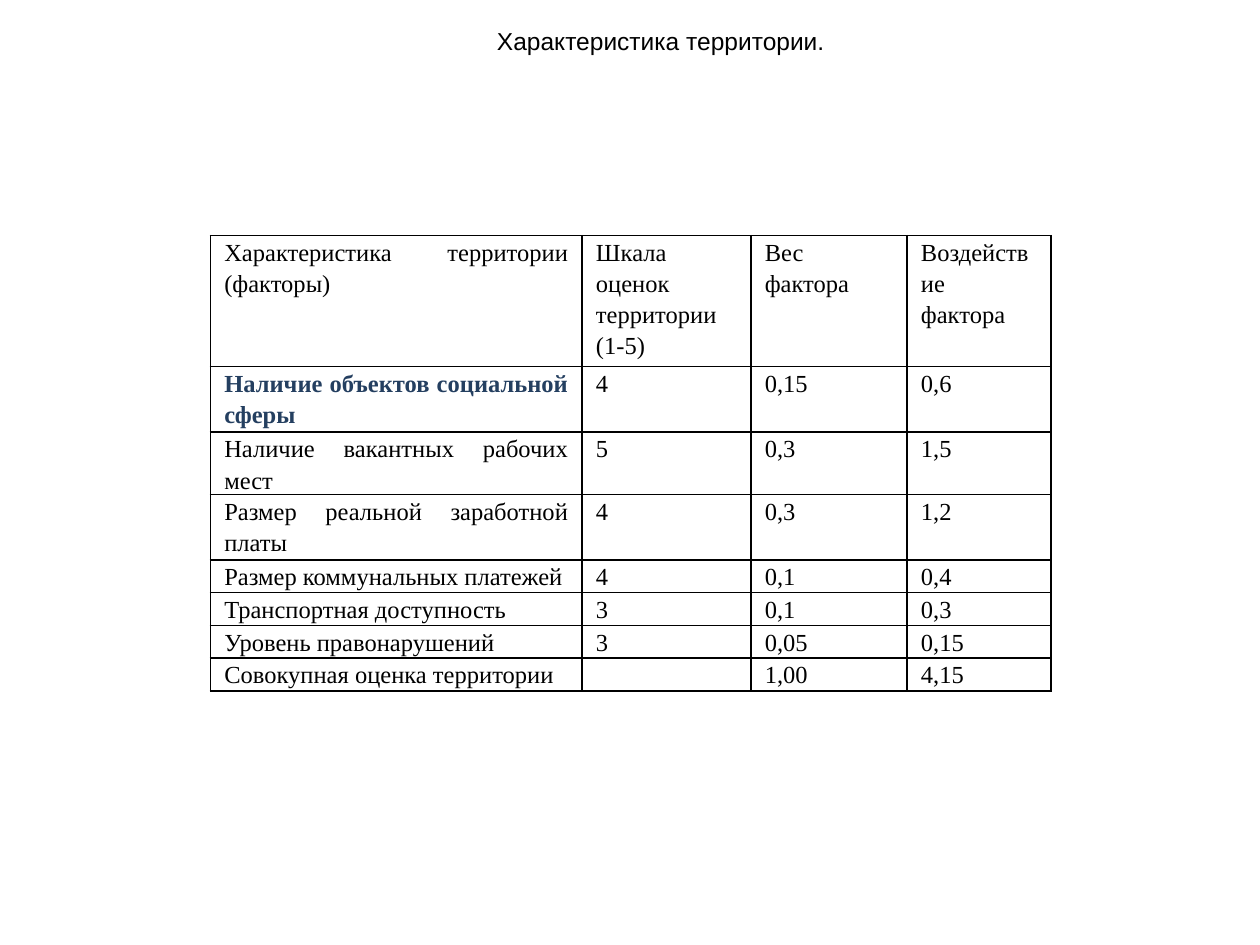
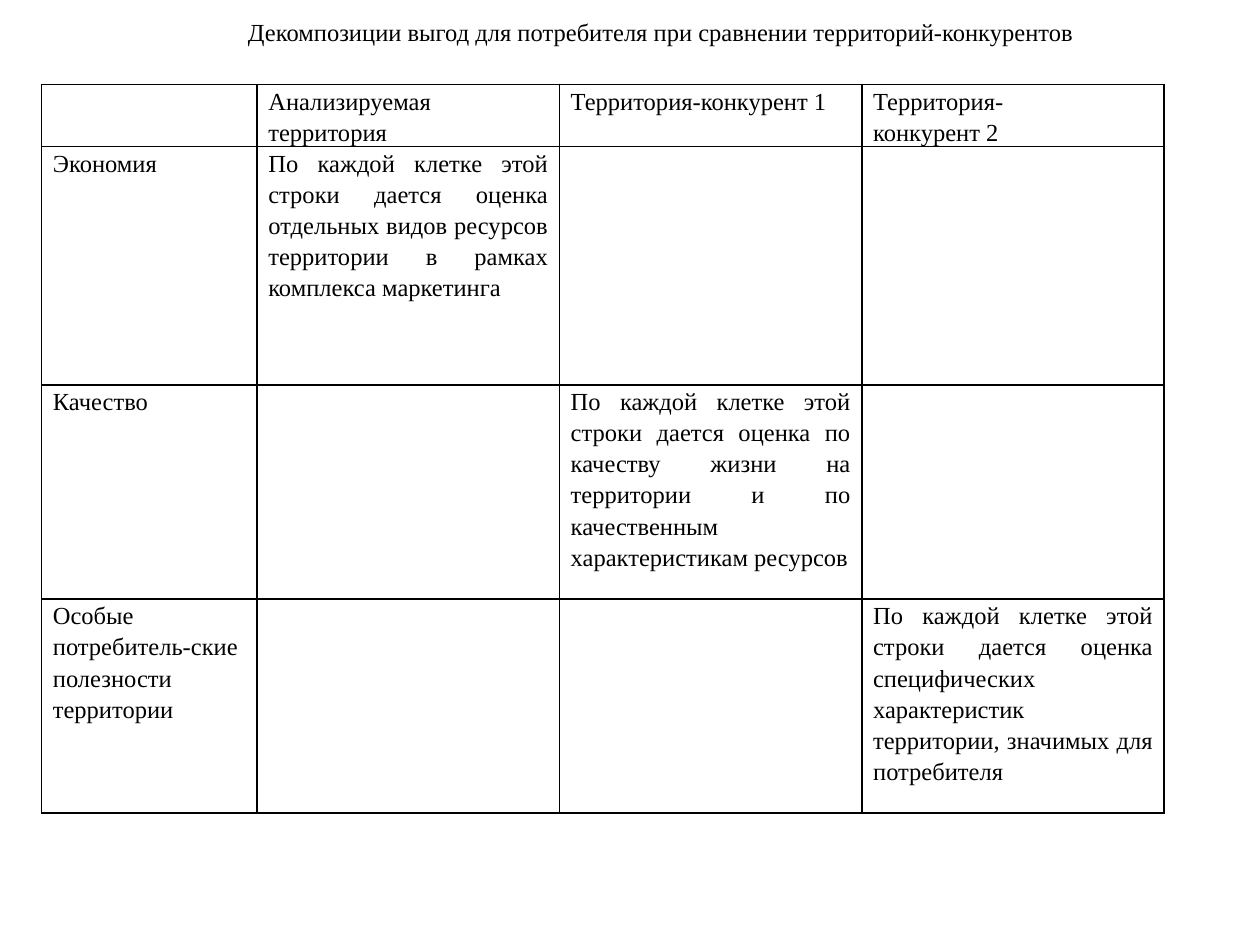
from dataclasses import dataclass

import pptx
import pptx.dml.color
import pptx.enum.text
import pptx.oxml.ns
import pptx.presentation
import pptx.slide
import pptx.table
import pptx.text.text
import pptx.util
from lxml import etree
from pptx.util import Inches

COLORS = {"text": "000000", "border": "000000", "emphasis": "243F60"}
BODY_FONT = "Times New Roman"
TEXT_SIZE = pptx.util.Pt(14)
BORDER_WIDTH = pptx.util.Pt(1)
TITLE_ONLY_LAYOUT = 5


@dataclass
class TitleSpec:
    text: str
    font: str
    top_inset: float = 0


@dataclass
class GridSpec:
    left: float
    top: float
    side_inset: float
    widths: list[float]
    heights: list[float]
    rows: list[list[str]]
    emphasized: str = ""


# Slide content
TERRITORY_TITLE = TitleSpec("Характеристика территории.", "Arial", 0.14)
TERRITORY_GRID = GridSpec(
    left=1.67, top=1.87, side_inset=0.11,
    widths=[2.95, 1.34, 1.24, 1.14],
    heights=[1.04, 0.52, 0.49, 0.52] + [0.26] * 4,
    rows=[
        ["Характеристика территории (факторы)", "Шкала оценок территории (1-5)",
         "Вес фактора", "Воздействие\nфактора"],
        ["Наличие объектов социальной сферы", "4", "0,15", "0,6"],
        ["Наличие вакантных рабочих мест", "5", "0,3", "1,5"],
        ["Размер реальной заработной платы", "4", "0,3", "1,2"],
        ["Размер коммунальных платежей", "4", "0,1", "0,4"],
        ["Транспортная доступность", "3", "0,1", "0,3"],
        ["Уровень правонарушений", "3", "0,05", "0,15"],
        ["Совокупная оценка территории", "", "1,00", "4,15"],
    ],
    emphasized="Наличие объектов социальной сферы",
)

BENEFITS_TITLE = TitleSpec(
    "Декомпозиции выгод для потребителя при сравнении территорий-конкурентов", BODY_FONT)
EACH_CELL = "По каждой клетке этой строки дается оценка"
BENEFITS_GRID = GridSpec(
    left=0.33, top=0.67, side_inset=0.09,
    widths=[1.71] + [2.4] * 3,
    heights=[0.49, 1.89, 1.7, 1.7],
    rows=[
        ["", "Анализируемая территория", "Территория-конкурент 1", "Территория-\nконкурент 2"],
        ["Экономия",
         f"{EACH_CELL} отдельных видов ресурсов территории в рамках комплекса маркетинга", "", ""],
        ["Качество", "",
         f"{EACH_CELL} по качеству жизни на территории и по качественным "
         "характеристикам ресурсов", ""],
        ["Особые потребитель-ские полезности территории", "", "",
         f"{EACH_CELL} специфических характеристик территории, значимых для потребителя"],
    ],
)


def format_para(para: pptx.text.text._Paragraph, font: str, color: str, bold: bool = False) -> None:
    para.font.name = font
    para.font.size = TEXT_SIZE
    para.font.bold = bold
    para.font.color.rgb = pptx.dml.color.RGBColor.from_string(COLORS[color])


def add_title(page: pptx.slide.Slide, spec: TitleSpec) -> None:
    title = page.shapes.title
    title.left, title.top = Inches(0), Inches(0)
    title.width, title.height = Inches(10), Inches(0.5)
    frame = title.text_frame
    frame.text = spec.text
    frame.word_wrap = True
    frame.auto_size = pptx.enum.text.MSO_AUTO_SIZE.NONE
    frame.vertical_anchor = pptx.enum.text.MSO_ANCHOR.MIDDLE
    # The wider left inset shifts the centred title to the right
    frame.margin_left, frame.margin_right = Inches(0.53), Inches(0.04)
    frame.margin_top, frame.margin_bottom = Inches(spec.top_inset), Inches(0)
    para = frame.paragraphs[0]
    para.alignment = pptx.enum.text.PP_ALIGN.CENTER
    format_para(para, spec.font, "text")


def add_borders(cell: pptx.table._Cell) -> None:
    qn = pptx.oxml.ns.qn
    properties = cell._tc.get_or_add_tcPr()
    for index, side in enumerate(("lnL", "lnR", "lnT", "lnB")):
        line = etree.Element(qn(f"a:{side}"), w=str(int(BORDER_WIDTH)))
        fill = etree.SubElement(line, qn("a:solidFill"))
        etree.SubElement(fill, qn("a:srgbClr"), val=COLORS["border"])
        properties.insert(index, line)


def fill_cell(cell: pptx.table._Cell, text: str, side_inset: float, emphasized: bool) -> None:
    cell.text = text
    cell.margin_left = cell.margin_right = Inches(side_inset)
    cell.margin_top = cell.margin_bottom = Inches(0)
    cell.fill.background()
    add_borders(cell)
    for para in cell.text_frame.paragraphs:
        para.alignment = pptx.enum.text.PP_ALIGN.JUSTIFY
        para.line_spacing = 1.15
        format_para(para, BODY_FONT, "emphasis" if emphasized else "text", emphasized)
        if not text:
            # Keep empty cells from stretching their row
            etree.SubElement(para._p, pptx.oxml.ns.qn("a:endParaRPr"),
                             sz=str(int(TEXT_SIZE.pt * 100)))


def add_grid(page: pptx.slide.Slide, spec: GridSpec) -> None:
    frame = page.shapes.add_table(
        len(spec.heights), len(spec.widths), Inches(spec.left), Inches(spec.top),
        Inches(sum(spec.widths)), Inches(sum(spec.heights)))
    table = frame.table
    table.first_row = table.horz_banding = False
    for column, width in zip(table.columns, spec.widths):
        column.width = Inches(width)
    for row, height, texts in zip(table.rows, spec.heights, spec.rows):
        row.height = Inches(height)
        for cell, text in zip(row.cells, texts):
            fill_cell(cell, text, spec.side_inset, bool(text) and text == spec.emphasized)


def add_page(deck: pptx.presentation.Presentation, title: TitleSpec, grid: GridSpec) -> None:
    page = deck.slides.add_slide(deck.slide_layouts[TITLE_ONLY_LAYOUT])
    add_grid(page, grid)
    add_title(page, title)


def main() -> None:
    deck = pptx.Presentation()
    deck.slide_width, deck.slide_height = Inches(10), Inches(7.5)
    add_page(deck, TERRITORY_TITLE, TERRITORY_GRID)
    add_page(deck, BENEFITS_TITLE, BENEFITS_GRID)
    deck.save("out.pptx")


if __name__ == "__main__":
    main()
